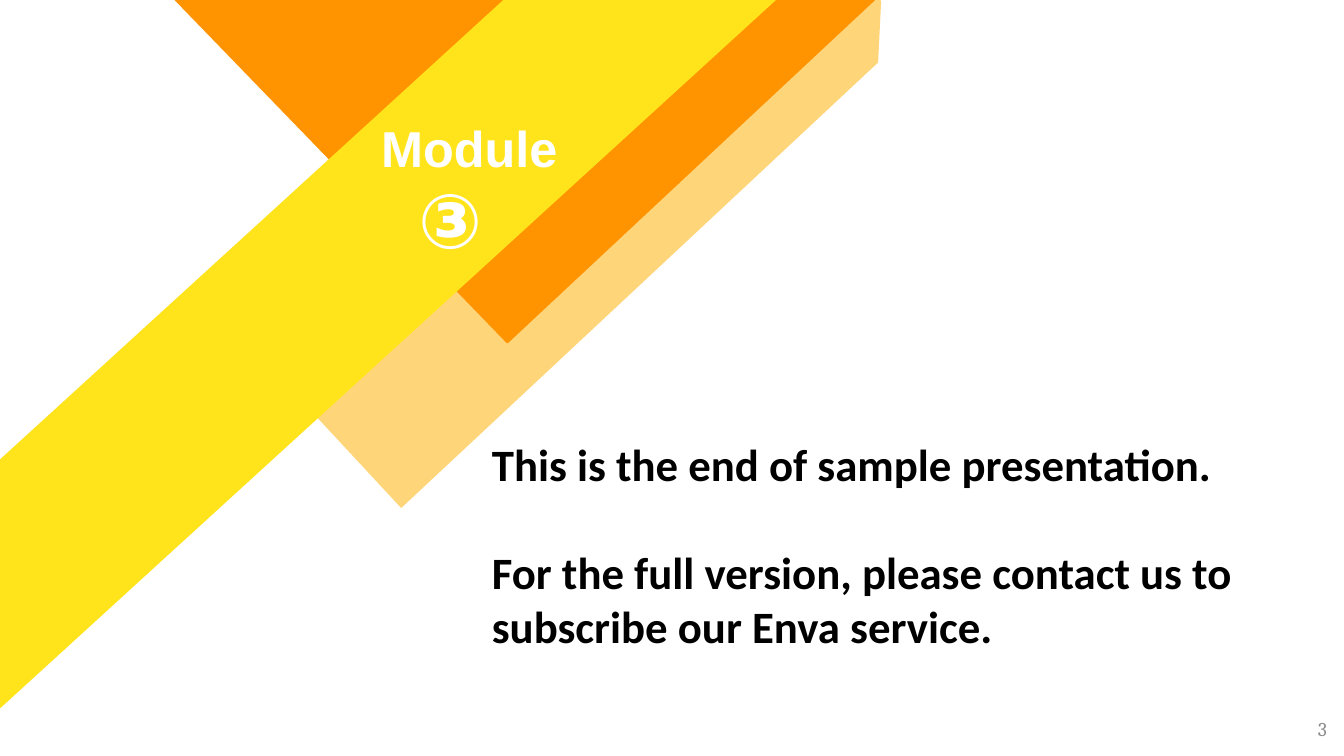
import pptx
import pptx.dml.color
import pptx.enum.shapes
import pptx.enum.text
import pptx.util

Inches = pptx.util.Inches
RGBColor = pptx.dml.color.RGBColor
SHAPE = pptx.enum.shapes.MSO_SHAPE
ALIGN = pptx.enum.text.PP_ALIGN
ANCHOR = pptx.enum.text.MSO_ANCHOR

PEACH = RGBColor(0xFF, 0xD5, 0x79)
ORANGE = RGBColor(0xFF, 0x93, 0x00)
YELLOW = RGBColor(0xFF, 0xE3, 0x1B)
WHITE = RGBColor(0xFF, 0xFF, 0xFF)
BLACK = RGBColor(0x00, 0x00, 0x00)
GRAY = RGBColor(0x8C, 0x8C, 0x8C)


def write(box, place, lines, font_name, size, color, bold=True,
          align=ALIGN.LEFT, anchor=ANCHOR.TOP, wrap=True):
    """Place a text shape and fill it with one paragraph per line."""
    box.left, box.top, box.width, box.height = (Inches(v) for v in place)
    frame = box.text_frame
    frame.text = "\n".join(lines)
    frame.auto_size = pptx.enum.text.MSO_AUTO_SIZE.NONE
    frame.word_wrap = wrap
    frame.vertical_anchor = anchor
    frame.margin_left = frame.margin_right = Inches(0.1)
    frame.margin_top = frame.margin_bottom = Inches(0.05)
    for paragraph in frame.paragraphs:
        paragraph.alignment = align
        paragraph.line_spacing = 1.0
        for run in paragraph.runs:
            run.font.name = font_name
            run.font.size = pptx.util.Pt(size)
            run.font.bold = bold
            run.font.color.rgb = color


presentation = pptx.Presentation()
presentation.slide_width = Inches(13.33)
presentation.slide_height = Inches(7.5)
slide = presentation.slides.add_slide(presentation.slide_layouts[5])
shapes = slide.shapes

# Ribbon artwork, back to front
shadow_points = [(Inches(x), Inches(y)) for x, y in
                 [(3.98, 5.04), (8.71, 0.62), (8.74, 0.01), (7.86, -0.93), (2.81, 3.78)]]
outline = shapes.build_freeform(*shadow_points[0], scale=1.0)
outline.add_line_segments(shadow_points[1:], close=True)
ribbon_shadow = outline.convert_to_shape()
ribbon_shadow.shadow.inherit = False
ribbon_shadow.fill.solid()
ribbon_shadow.fill.fore_color.rgb = PEACH
ribbon_shadow.line.fill.background()

for kind, place, rotation, adjustment, color in [
    (SHAPE.ISOSCELES_TRIANGLE, (1.74, 0, 6.93, 3.4), 180, 0.525, ORANGE),
    (SHAPE.TRAPEZOID, (-4.55, 2.82, 13.63, 1.81), 317.6, 0.996, YELLOW),
]:
    band = shapes.add_shape(kind, *(Inches(v) for v in place))
    band.rotation = rotation
    band.adjustments[0] = adjustment
    band.shadow.inherit = False
    band.fill.solid()
    band.fill.fore_color.rgb = color
    band.line.color.rgb = color
    band.line.width = pptx.util.Pt(1)

# Title, brought in front of the ribbon
module_title = shapes.title
ribbon_shadow._element.getparent().append(module_title._element)
write(module_title, (3.67, 1.11, 1.97, 0.71), ["Module"], "Arial", 36, WHITE,
      align=ALIGN.CENTER, wrap=False)

module_number = shapes.add_textbox(0, 0, 0, 0)
write(module_number, (4.05, 1.67, 1.62, 1.01), ["③"], "Arial", 54, WHITE)

message = shapes.add_textbox(0, 0, 0, 0)
write(message, (4.78, 4.28, 7.61, 2.26),
      ["This is the end of sample presentation.",
       "For the full version, please contact us to\vsubscribe our Enva service."],
      "Calibri", 32, BLACK, wrap=False)
message.text_frame.paragraphs[1].space_before = pptx.util.Pt(39)

page_number = shapes.add_textbox(0, 0, 0, 0)
write(page_number, (10.26, 7.03, 3, 0.4), ["3"], "Cambria", 14, GRAY, bold=False,
      align=ALIGN.RIGHT, anchor=ANCHOR.MIDDLE)

presentation.save("out.pptx")
